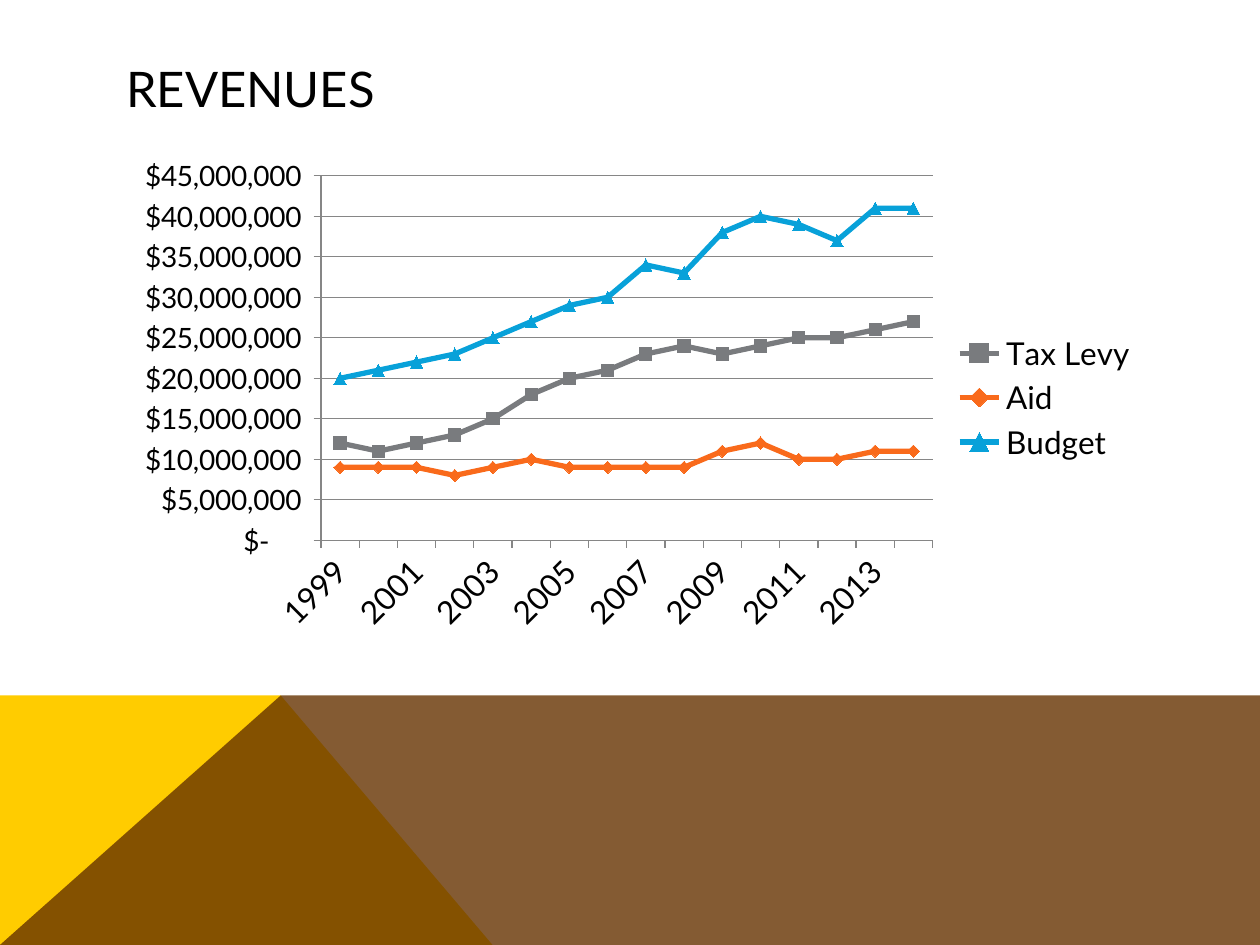
import pptx
import pptx.chart.data
import pptx.dml.color
import pptx.enum.chart
import pptx.enum.text
import pptx.oxml
import pptx.oxml.ns
import pptx.util
from pptx.util import Cm

RGB = pptx.dml.color.RGBColor
Pt = pptx.util.Pt
BLACK = RGB(0, 0, 0)
GOLD = RGB(0xFF, 0xCC, 0x00)
BROWN = RGB(0x66, 0x33, 0x00)
GREY = RGB(0x79, 0x7B, 0x7E)
ORANGE = RGB(0xF9, 0x6A, 0x1B)
BLUE = RGB(0x08, 0xA1, 0xD9)
RULE = RGB(0x86, 0x86, 0x86)

FONT = "Lato"
WIDE, HIGH = 25.4, 19.05
TOP, PEAK, FOOT = 14.02, 5.66, 9.93  # band top, peak and foot of the slope

TITLE = "REVENUES"
YEARS = [str(year) for year in range(1999, 2015)]
MARK = pptx.enum.chart.XL_MARKER_STYLE
# name, colour, marker, millions of dollars by year
LINES = [
    ("Tax Levy", GREY, MARK.SQUARE,
     [12, 11, 12, 13, 15, 18, 20, 21, 23, 24, 23, 24, 25, 25, 26, 27]),
    ("Aid", ORANGE, MARK.DIAMOND,
     [9, 9, 9, 8, 9, 10, 9, 9, 9, 9, 11, 12, 10, 10, 11, 11]),
    ("Budget", BLUE, MARK.TRIANGLE,
     [20, 21, 22, 23, 25, 27, 29, 30, 34, 33, 38, 40, 39, 37, 41, 41]),
]
MONEY = r'_("$"* #,##0_);_("$"* \(#,##0\);_("$"* "-"??_);_(@_)'
BANDS = [
    (GOLD, None, [(0, HIGH), (0, TOP), (PEAK, TOP), (FOOT, HIGH)]),
    (BROWN, 80, [(0, HIGH), (PEAK, TOP), (WIDE, TOP), (WIDE, HIGH)]),
]
PLOT = {"x": 0.2, "y": 0.05, "w": 0.59, "h": 0.74}


def style(item, **values):
    for name, value in values.items():
        setattr(item, name, value)


def node(tag, value):
    item = pptx.oxml.parse_xml(
        f'<{tag} {pptx.oxml.ns.nsdecls(tag.split(":")[0])}/>')
    if value is not None:
        item.set("val", str(value))
    return item


def paint(fill, color):
    fill.solid()
    fill.fore_color.rgb = color


def draw_band(slide, color, alpha, points):
    spots = [(Cm(x), Cm(y)) for x, y in points]
    pen = slide.shapes.build_freeform(*spots[0])
    pen.add_line_segments(spots[1:], close=True)
    band = pen.convert_to_shape()
    band.shadow.inherit = False
    band.line.fill.background()
    paint(band.fill, color)
    if alpha:
        tint = band.fill._xPr.find(".//" + pptx.oxml.ns.qn("a:srgbClr"))
        tint.append(node("a:alpha", alpha * 1000))


def set_title(slide):
    title = slide.shapes.title
    style(title, left=Cm(2.29), top=Cm(1.02), width=Cm(20.88), height=Cm(1.52))
    frame = title.text_frame
    frame.text = TITLE
    style(frame, vertical_anchor=pptx.enum.text.MSO_ANCHOR.MIDDLE,
          word_wrap=True)
    line = frame.paragraphs[0]
    line.alignment = pptx.enum.text.PP_ALIGN.LEFT
    style(line.runs[0].font, name=FONT, size=Pt(28))
    line.runs[0].font.color.rgb = BLACK


def place_plot(chart):
    """Fix the inner plot area as shares of the chart frame."""
    area = chart._chartSpace.chart.plotArea
    for old in area.findall(pptx.oxml.ns.qn("c:layout")):
        area.remove(old)
    layout, manual = node("c:layout", None), node("c:manualLayout", None)
    parts = {"layoutTarget": "inner", "xMode": "edge", "yMode": "edge", **PLOT}
    for tag, value in parts.items():
        manual.append(node("c:" + tag, value))
    layout.append(manual)
    area.insert(0, layout)


def add_lines(slide):
    data = pptx.chart.data.CategoryChartData(number_format=MONEY)
    data.categories = YEARS
    for name, _, _, values in LINES:
        data.add_series(name, [value * 1_000_000 for value in values])
    kind = pptx.enum.chart.XL_CHART_TYPE.LINE_MARKERS
    chart = slide.shapes.add_chart(
        kind, Cm(2.29), Cm(3.05), Cm(20.9), Cm(9.93), data).chart
    style(chart, has_title=False, has_legend=True)
    style(chart.font, name=FONT, size=Pt(18))
    chart.font.color.rgb = BLACK
    style(chart.legend, include_in_layout=False,
          position=pptx.enum.chart.XL_LEGEND_POSITION.RIGHT)
    chart.plots[0].vary_by_categories = False

    for line, (_, color, mark, _) in zip(chart.plots[0].series, LINES):
        line.smooth = False
        style(line.format.line, width=Pt(3))
        line.format.line.color.rgb = color
        style(line.marker, style=mark, size=7)
        paint(line.marker.format.fill, color)
        line.marker.format.line.color.rgb = color

    years, money = chart.category_axis, chart.value_axis
    style(money, minimum_scale=0, maximum_scale=45_000_000,
          major_unit=5_000_000, has_major_gridlines=True)
    style(money.tick_labels, number_format=MONEY,
          number_format_is_linked=False)
    for axis, size in ((years, 18), (money, 16)):
        axis.major_tick_mark = pptx.enum.chart.XL_TICK_MARK.OUTSIDE
        style(axis.tick_labels.font, name=FONT, size=Pt(size))
        axis.tick_labels.font.color.rgb = BLACK
    for part in (years, money, money.major_gridlines):
        part.format.line.color.rgb = RULE
        part.format.line.width = Pt(0.75)
    years._element.txPr.bodyPr.set("rot", "-2700000")
    last = years._element.find(pptx.oxml.ns.qn("c:noMultiLvlLbl"))
    last.addprevious(node("c:tickLblSkip", 2))
    place_plot(chart)


def main():
    deck = pptx.Presentation()
    style(deck, slide_width=Cm(WIDE), slide_height=Cm(HIGH))
    slide = deck.slides.add_slide(deck.slide_layouts[5])
    for band in BANDS:
        draw_band(slide, *band)
    set_title(slide)
    add_lines(slide)
    deck.save("out.pptx")


if __name__ == "__main__":
    main()
